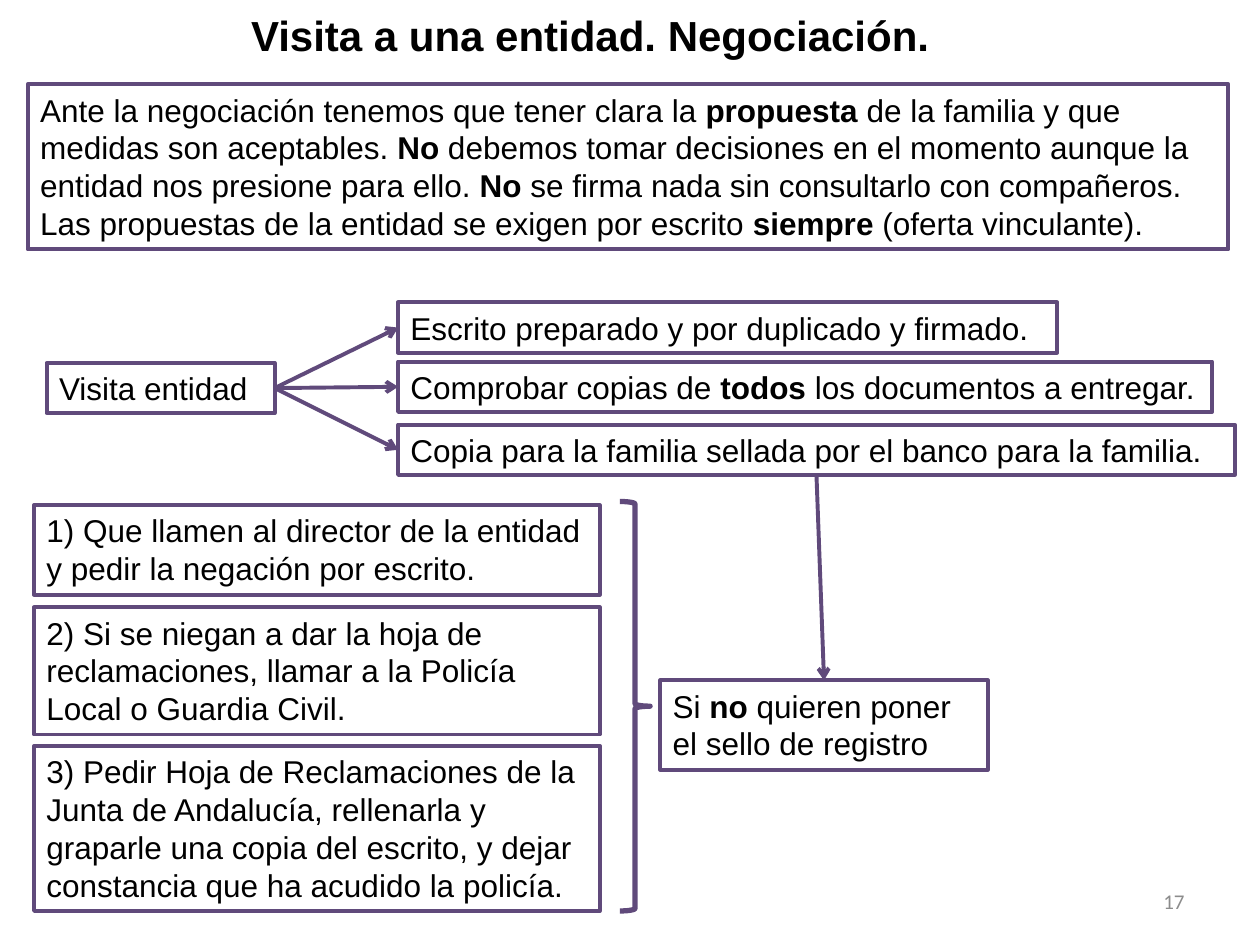
from lxml import etree
from pptx import Presentation
from pptx.dml.color import RGBColor
from pptx.enum.shapes import MSO_CONNECTOR, MSO_SHAPE
from pptx.enum.text import MSO_ANCHOR, MSO_AUTO_SIZE, PP_ALIGN
from pptx.oxml.ns import qn
from pptx.util import Inches, Pt

RECT, BRACE = MSO_SHAPE.RECTANGLE, MSO_SHAPE.RIGHT_BRACE
STRAIGHT = MSO_CONNECTOR.STRAIGHT
LEFT, CENTER, RIGHT = PP_ALIGN.LEFT, PP_ALIGN.CENTER, PP_ALIGN.RIGHT
TOP, MIDDLE = MSO_ANCHOR.TOP, MSO_ANCHOR.MIDDLE
GROW = MSO_AUTO_SIZE.SHAPE_TO_FIT_TEXT

PURPLE, BLACK, GRAY = "604A7B", "000000", "8C8C8C"
# Connection sites of a rectangle
SITE_TOP, SITE_LEFT, SITE_BOTTOM, SITE_RIGHT = range(4)

INTRO = (
    "Ante la negociación tenemos que tener clara la *propuesta* de la familia "
    "y que medidas son aceptables. *No* debemos tomar decisiones en el momento "
    "aunque la entidad nos presione para ello. *No* se firma nada sin "
    "consultarlo con compañeros. Las propuestas de la entidad se exigen por "
    "escrito *siempre* (oferta vinculante)."
)
# Top, width, height, text
TASKS = [
    (2.4, 5.23, 0.4, "Escrito preparado y por duplicado y firmado."),
    (2.87, 6.46, 0.4, "Comprobar copias de *todos* los documentos a entregar."),
    (3.37, 6.64, 0.4, "Copia para la familia sellada por el banco para la familia."),
]
# Top, height, text
STEPS = [
    (4.01, 0.71, "1) Que llamen al director de la entidad y pedir la negación "
                 "por escrito."),
    (4.82, 1.01, "2) Si se niegan a dar la hoja de reclamaciones, llamar a la "
                 "Policía Local o Guardia Civil."),
    (5.92, 1.31, "3) Pedir Hoja de Reclamaciones de la Junta de Andalucía, "
                 "rellenarla y graparle una copia del escrito, y dejar "
                 "constancia que ha acudido la policía."),
]


def color(code):
    return RGBColor.from_string(code)


def write(frame, text, size=18, font="Arial", tint=BLACK, align=LEFT):
    """Fill a text frame; words between asterisks are bold."""
    for row, line in enumerate(text.split("\n")):
        para = frame.add_paragraph() if row else frame.paragraphs[0]
        para.alignment = align
        para.font.size, para.font.name = Pt(size), font
        para.font.color.rgb = color(tint)
        for spot, part in enumerate(line.split("*")):
            if part:
                run = para.add_run()
                run.text = part
                if spot % 2:
                    run.font.bold = True


def outline(shape, width):
    shape.line.color.rgb = color(PURPLE)
    shape.line.width = Pt(width)


def add_form(slide, kind, area, width=2.25):
    shape = slide.shapes.add_shape(kind, *map(Inches, area))
    shape.shadow.inherit = False
    shape.fill.background()
    outline(shape, width)
    return shape


def add_box(slide, area, text):
    box = add_form(slide, RECT, area)
    frame = box.text_frame
    frame.word_wrap = True
    frame.auto_size = GROW
    frame.vertical_anchor = TOP
    write(frame, text)
    return box


def add_label(slide, area, text, wrap=True, anchor=TOP, **style):
    frame = slide.shapes.add_textbox(*map(Inches, area)).text_frame
    frame.word_wrap = wrap
    frame.vertical_anchor = anchor
    write(frame, text, **style)


def add_arrow(slide, start, exit_site, end, entry_site):
    arrow = slide.shapes.add_connector(STRAIGHT, 0, 0, 0, 0)
    arrow.begin_connect(start, exit_site)
    arrow.end_connect(end, entry_site)
    outline(arrow, 2.25)
    etree.SubElement(arrow.line._get_or_add_ln(), qn("a:tailEnd"), type="arrow")
    etree.SubElement(arrow._element.spPr, qn("a:effectLst"))


def main():
    deck = Presentation()
    deck.slide_width, deck.slide_height = Inches(10), Inches(7.5)
    slide = deck.slides.add_slide(deck.slide_layouts[6])

    # Page number, title and introduction
    add_label(slide, (7.17, 6.95, 2.33, 0.4), "17", anchor=MIDDLE,
              size=12, font="Calibri", tint=GRAY, align=RIGHT)
    add_label(slide, (1.87, 0.03, 5.63, 0.5),
              "*Visita a una entidad. Negociación.*", wrap=False,
              size=24, align=CENTER)
    add_box(slide, (0.22, 0.67, 9.53, 1.31), INTRO)

    # Visit and its three tasks
    visit = add_box(slide, (0.37, 2.88, 1.81, 0.4), "Visita entidad")
    for top, width, height, text in TASKS:
        task = add_box(slide, (3.16, top, width, height), text)
        add_arrow(slide, visit, SITE_RIGHT, task, SITE_LEFT)

    # Refusal of the stamp, which follows from the last task
    refusal = add_box(slide, (5.24, 5.4, 2.6, 0.71),
                      "Si *no* quieren poner\nel sello de registro")
    add_arrow(slide, task, SITE_BOTTOM, refusal, SITE_TOP)

    # Steps to take, gathered by a brace
    add_form(slide, BRACE, (4.92, 3.98, 0.24, 3.25), 3)
    for top, height, text in STEPS:
        add_box(slide, (0.27, top, 4.49, height), text)

    deck.save("out.pptx")


if __name__ == "__main__":
    main()
